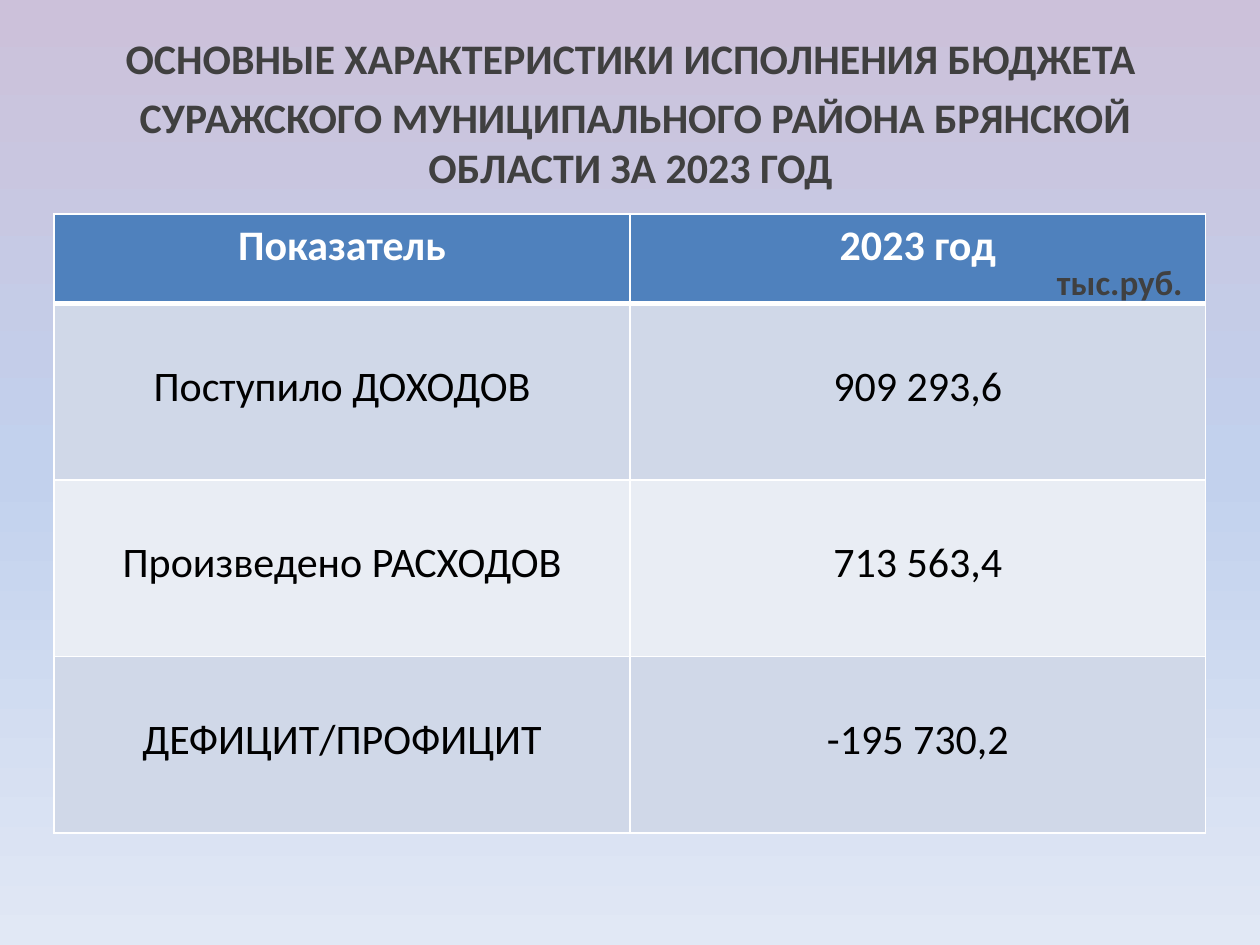
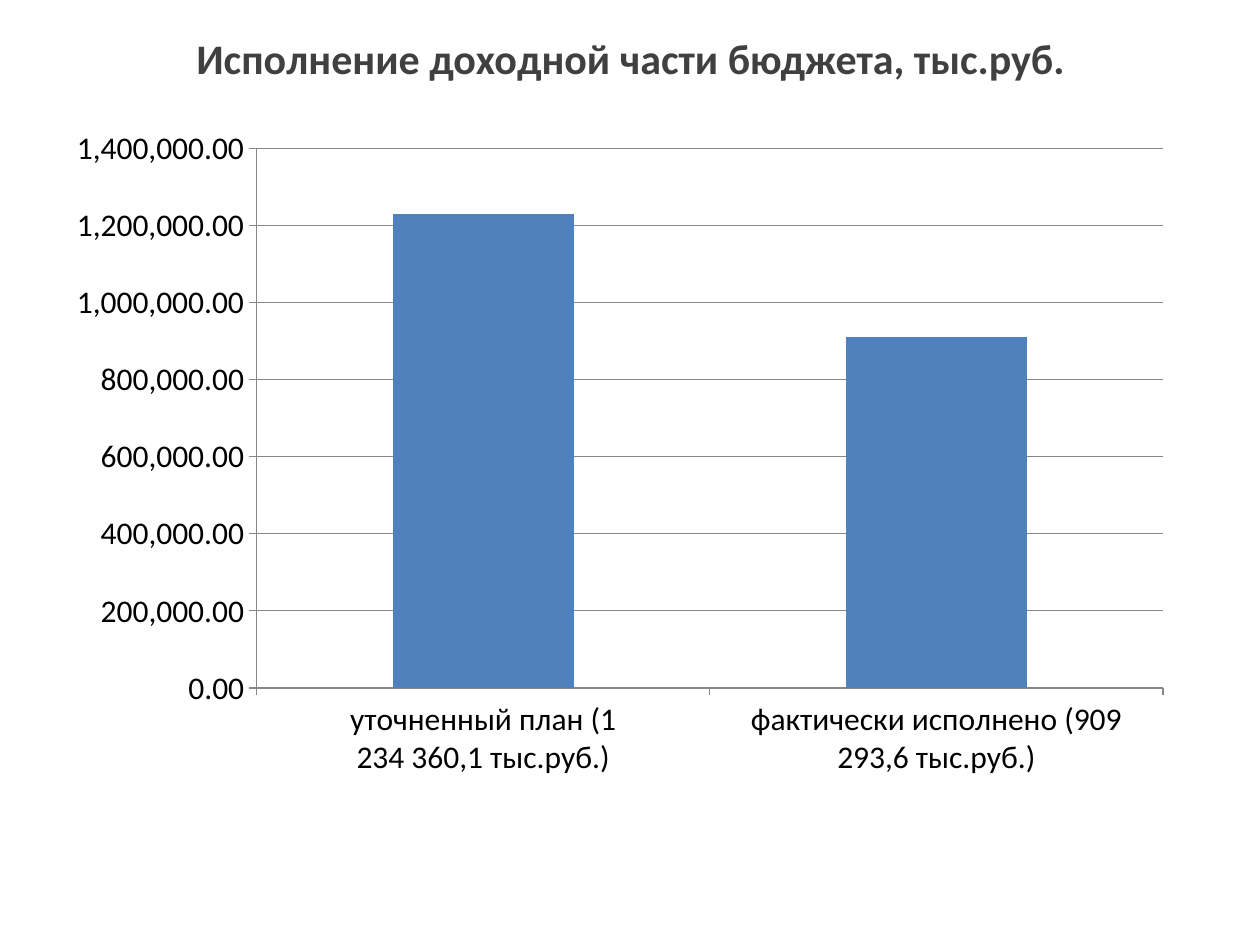
import copy

import pptx
import pptx.chart.data
import pptx.dml.color
import pptx.enum.chart
import pptx.enum.text
import pptx.oxml
import pptx.oxml.ns
import pptx.util

PX = 9144  # EMU in one px, 100 px to the inch
FONT = "Calibri"
TITLE_SIZE = 24
COLORS = {
    "text": "404040",
    "black": "000000",
    "white": "FFFFFF",
    "accent": "4F81BD",
    "band_dark": "D0D8E8",
    "band_light": "E9EDF4",
    "axis": "878787",
    "sky_top": "CCC1DA",
    "sky_middle": "C2D1ED",
    "sky_bottom": "E1E8F5",
}


def rgb(name):
    return pptx.dml.color.RGBColor.from_string(COLORS[name])


def px(*lengths):
    return [pptx.util.Emu(length * PX) for length in lengths]


class Deck:
    """Holds the shared style and the slide being filled."""

    def __init__(self):
        self.prs = pptx.Presentation()
        self.prs.slide_width, self.prs.slide_height = px(1000, 750)
        self.slide = None

    def start_slide(self, title_lines, title_height, background):
        """Add a titled slide; several background colours make a vertical gradient."""
        self.slide = self.prs.slides.add_slide(self.prs.slide_layouts[5])
        self.background(background)
        title = self.slide.shapes.title
        title.left, title.top, title.width, title.height = px(28, 21, 945, title_height)
        frame = title.text_frame
        frame.text = "\n".join(title_lines)
        frame.auto_size = pptx.enum.text.MSO_AUTO_SIZE.NONE
        frame.vertical_anchor = pptx.enum.text.MSO_ANCHOR.TOP
        self.style(frame, TITLE_SIZE, "text", bold=True, space_before=4.8)

    def background(self, names):
        fill = self.slide.background.fill
        if len(names) == 1:
            fill.solid()
            fill.fore_color.rgb = rgb(names[0])
            return
        fill.gradient()
        fill.gradient_angle = 270
        stop_list = self.slide.element.find(".//" + pptx.oxml.ns.qn("a:gsLst"))
        while len(stop_list) < len(names):
            stop_list.append(copy.deepcopy(stop_list[0]))
        for index, (stop, name) in enumerate(zip(fill.gradient_stops, names)):
            stop.position = index / (len(names) - 1)
            stop.color.rgb = rgb(name)

    def style(self, frame, size, color, bold=False, align="CENTER", space_before=0):
        for paragraph in frame.paragraphs:
            paragraph.alignment = getattr(pptx.enum.text.PP_ALIGN, align)
            paragraph.space_before = pptx.util.Pt(space_before)
            for run in paragraph.runs:
                self.font(run.font, size, color, bold)

    def font(self, font, size, color, bold=False):
        font.name, font.size, font.bold = FONT, pptx.util.Pt(size), bold
        font.color.rgb = rgb(color)

    def label(self, text, box, size):
        frame = self.slide.shapes.add_textbox(*px(*box)).text_frame
        frame.word_wrap = True
        frame.text = text
        self.style(frame, size, "text", bold=True, align="LEFT")

    def borders(self, cell, top=1, bottom=1):
        """Draw white cell borders; widths are in points."""
        properties = cell._tc.get_or_add_tcPr()
        for side, width in zip("LRTB", (1, 1, top, bottom)):
            properties.append(pptx.oxml.parse_xml(
                f'<a:ln{side} {pptx.oxml.ns.nsdecls("a")} w="{pptx.util.Pt(width)}">'
                f'<a:solidFill><a:srgbClr val="{COLORS["white"]}"/></a:solidFill>'
                f'</a:ln{side}>'))

    def table(self, rows, box, header_height, row_height):
        table = self.slide.shapes.add_table(len(rows), len(rows[0]), *px(*box)).table
        for column in table.columns:
            column.width = px(box[2] // len(rows[0]))[0]
        for r, values in enumerate(rows):
            header = r == 0
            table.rows[r].height = px(header_height if header else row_height)[0]
            band = "accent" if header else ("band_light", "band_dark")[r % 2]
            for c, value in enumerate(values):
                cell = table.cell(r, c)
                cell.text = value
                cell.margin_top = px(5 if header else 46)[0]
                self.style(cell.text_frame, 24, "white" if header else "black", bold=header)
                self.borders(cell, top=3 if r == 1 else 1, bottom=3 if header else 1)
                cell.fill.solid()
                cell.fill.fore_color.rgb = rgb(band)

    def column_chart(self, name, points, box, maximum, step):
        data = pptx.chart.data.CategoryChartData()
        data.categories = list(points)
        data.add_series(name, list(points.values()))
        kind = pptx.enum.chart.XL_CHART_TYPE.COLUMN_CLUSTERED
        chart = self.slide.shapes.add_chart(kind, *px(*box), data).chart
        chart.has_legend = chart.has_title = False
        self.font(chart.font, 18, "black")

        plot = chart.plots[0]
        plot.gap_width = 150
        plot.vary_by_categories = False
        columns = plot.series[0].format.fill
        columns.solid()
        columns.fore_color.rgb = rgb("accent")

        scale = chart.value_axis
        scale.minimum_scale, scale.maximum_scale, scale.major_unit = 0, maximum, step
        scale.tick_labels.number_format = "#,##0.00"
        scale.tick_labels.number_format_is_linked = False
        scale.has_major_gridlines = True
        for axis in (scale, chart.category_axis):
            axis.major_tick_mark = pptx.enum.chart.XL_TICK_MARK.OUTSIDE
        for part in (scale, chart.category_axis, scale.major_gridlines):
            part.format.line.color.rgb = rgb("axis")
            part.format.line.width = pptx.util.Pt(0.75)


def main():
    deck = Deck()

    deck.start_slide(
        ["ОСНОВНЫЕ ХАРАКТЕРИСТИКИ ИСПОЛНЕНИЯ БЮДЖЕТА",
         " СУРАЖСКОГО МУНИЦИПАЛЬНОГО РАЙОНА БРЯНСКОЙ ОБЛАСТИ ЗА 2023 ГОД"],
        102, ["sky_top", "sky_middle", "sky_bottom"])
    deck.table(
        [("Показатель", "2023 год"),
         ("Поступило ДОХОДОВ", "909 293,6"),
         ("Произведено РАСХОДОВ", "713 563,4"),
         ("ДЕФИЦИТ/ПРОФИЦИТ", "-195 730,2")],
        (43, 170, 914, 491), header_height=71, row_height=140)
    deck.label("тыс.руб.", (829, 202, 125, 39), 20)

    deck.start_slide(["Исполнение доходной части бюджета, тыс.руб."], 63, ["white"])
    deck.column_chart(
        "Доходы",
        {"уточненный план (1\n234 360,1 тыс.руб.)": 1230000,
         "фактически исполнено (909\n293,6 тыс.руб.)": 910000},
        (43, 92, 898, 535), maximum=1400000, step=200000)

    deck.prs.save("out.pptx")


if __name__ == "__main__":
    main()
